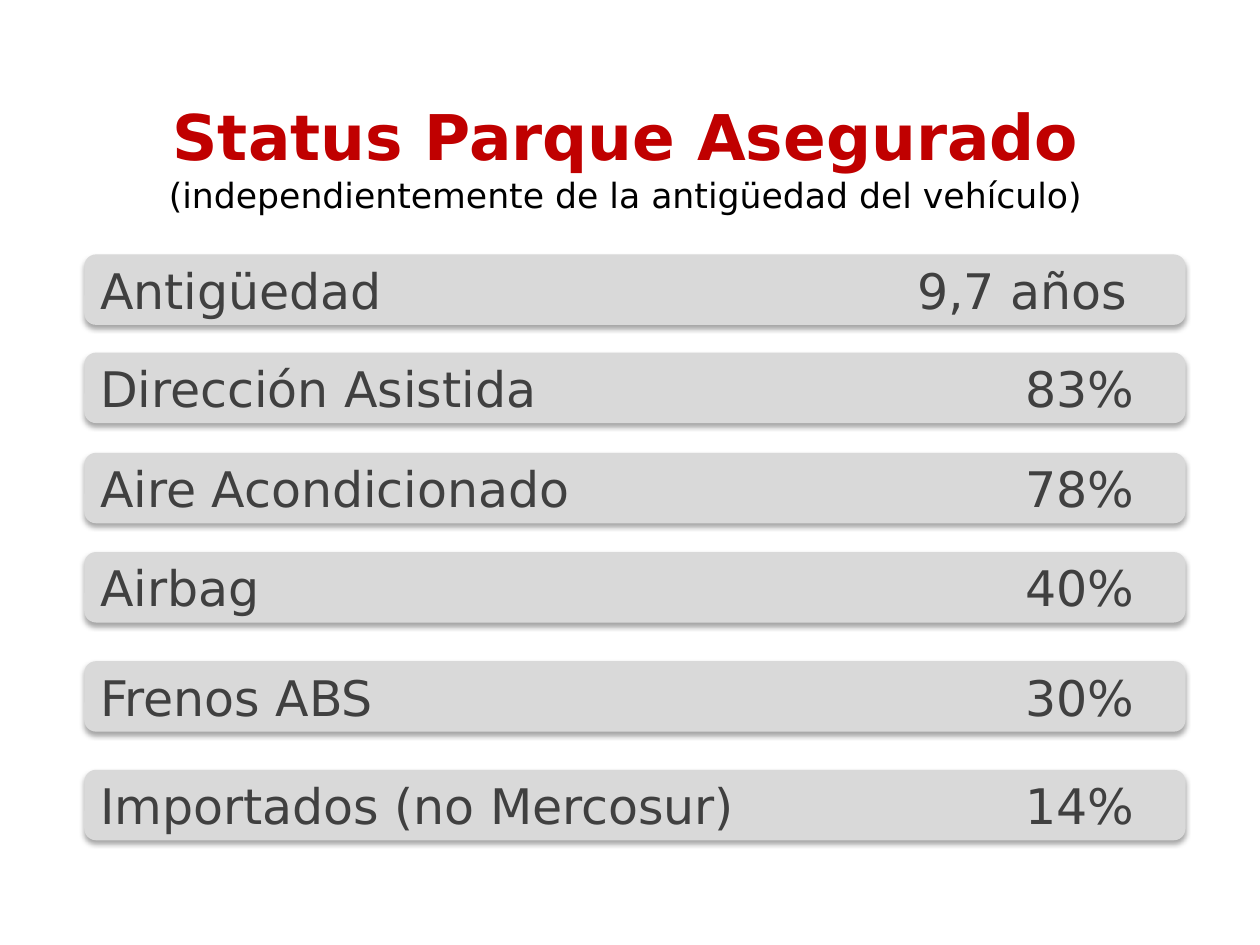
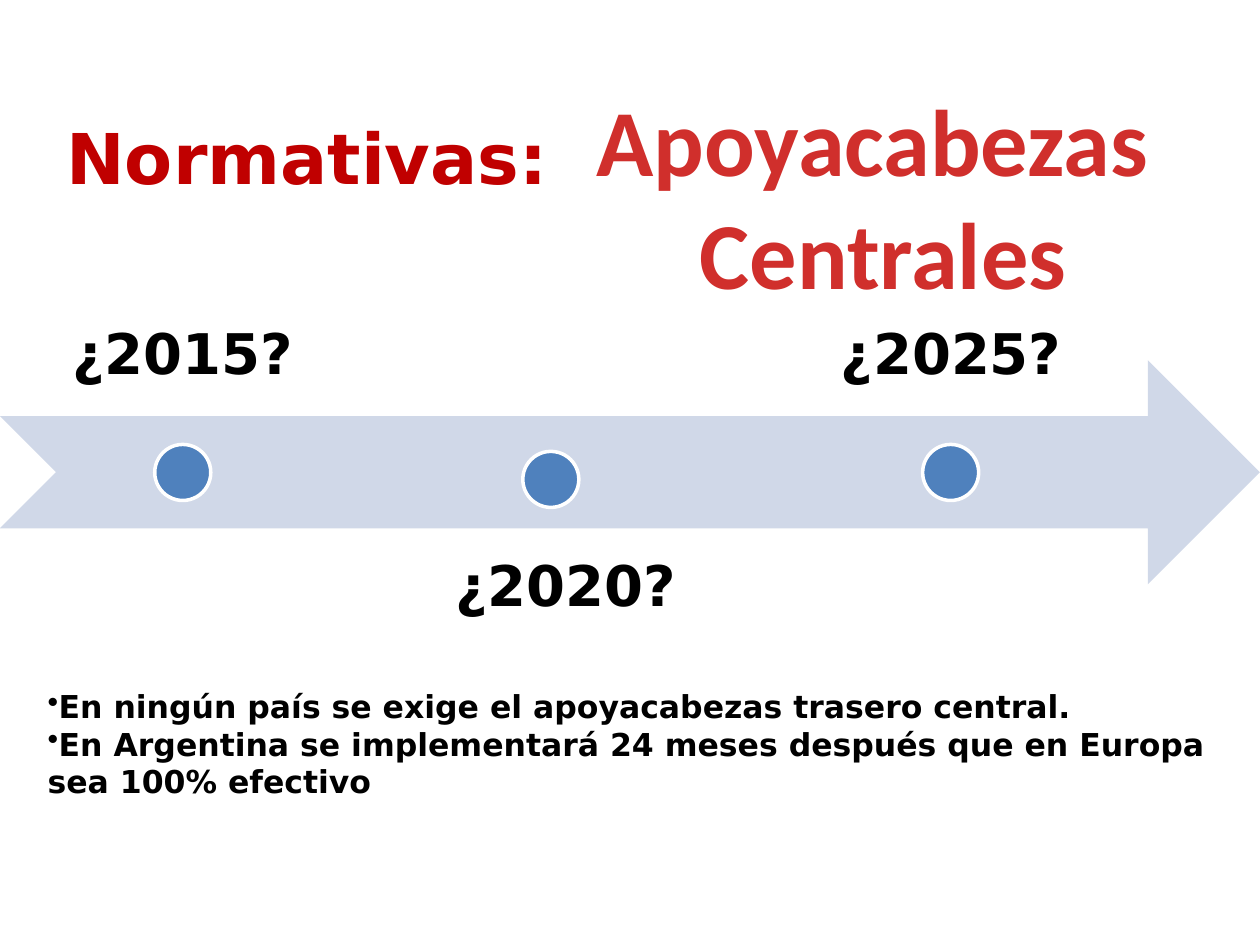
import pptx
import pptx.util
import pptx.dml.color
import pptx.enum.shapes
import pptx.enum.text
import pptx.oxml
import pptx.oxml.ns

Cm = pptx.util.Cm
Pt = pptx.util.Pt
SHAPE = pptx.enum.shapes.MSO_SHAPE
ALIGN = pptx.enum.text.PP_ALIGN
ANCHOR = pptx.enum.text.MSO_ANCHOR

COLORS = {
    "title": "C00000",
    "topic": "D02F2C",
    "text": "000000",
    "bar": "D9D9D9",
    "bar_text": "404040",
    "arrow": "D0D8E8",
    "dot": "4F81BD",
    "dot_line": "FFFFFF",
}
FONT = "DejaVu Sans"
FORMATS = {
    "title": {"size": Pt(36), "name": FONT, "bold": True},
    "heading": {"size": Pt(40), "name": FONT, "bold": True},
    "subtitle": {"size": Pt(19.8), "name": FONT, "bold": False},
    "row": {"size": Pt(28), "name": FONT, "bold": False},
    "year": {"size": Pt(32), "name": FONT, "bold": True},
    "note": {"size": Pt(18), "name": FONT, "bold": True},
    "topic": {"size": Pt(54), "name": "Calibri", "bold": True},
}
ROWS = [
    (5.13, "Antigüedad", "9,7 años", 20.7),
    (7.11, "Dirección Asistida", "83%", 20.85),
    (9.13, "Aire Acondicionado", "78%", 20.85),
    (11.13, "Airbag", "40%", 20.85),
    (13.33, "Frenos ABS", "30%", 20.85),
    (15.52, "Importados (no Mercosur)", "14%", 20.85),
]
MILESTONES = [
    ("¿2015?", 0, 3.89, ANCHOR.BOTTOM, 3.12, 8.96),
    ("¿2020?", 7.72, 10.64, ANCHOR.TOP, 10.54, 9.1),
    ("¿2025?", 15.49, 3.89, ANCHOR.BOTTOM, 18.6, 8.96),
]
NOTES = [
    "En ningún país se exige el apoyacabezas trasero central.",
    "En Argentina se implementará 24 meses después que en Europa sea 100% efectivo",
]


def rgb(color):
    return pptx.dml.color.RGBColor.from_string(COLORS[color])


def add_xml(parent, xml):
    parent.append(pptx.oxml.parse_xml(
        xml.replace(" ", f" {pptx.oxml.ns.nsdecls('a')} ", 1)))


def add_run(p, text, style, color):
    r = p.add_run()
    r.text = text
    for name, value in FORMATS[style].items():
        setattr(r.font, name, value)
    r.font.color.rgb = rgb(color)


def add_text(s, box, anchor=ANCHOR.TOP, wrap=True, inset=None):
    tf = s.shapes.add_textbox(*map(Cm, box)).text_frame
    tf.word_wrap = wrap
    tf.vertical_anchor = anchor
    if inset is not None:
        for side in ("left", "top", "right", "bottom"):
            setattr(tf, f"margin_{side}", Cm(inset))
    return tf


def add_title(s, width, text, style, align):
    p = add_text(s, (1.09, 2.34, width, 1.63), ANCHOR.MIDDLE).paragraphs[0]
    p.alignment = align
    add_run(p, text, style, "title")
    return p


def add_shape(s, kind, box, fill, line=None):
    sp = s.shapes.add_shape(kind, *map(Cm, box))
    sp.shadow.inherit = False
    sp.fill.solid()
    sp.fill.fore_color.rgb = rgb(fill)
    if line:
        sp.line.color.rgb = rgb(line)
        sp.line.width = Pt(2)
    else:
        sp.line.fill.background()
    return sp


def add_row(s, top, label, value, tab):
    sp = add_shape(s, SHAPE.ROUNDED_RECTANGLE, (1.7, top, 22.2, 1.42), "bar")
    add_xml(sp.element.spPr.find(pptx.oxml.ns.qn("a:effectLst")),
            f'<a:outerShdw blurRad="{Pt(3.1)}" dist="{Pt(1.8)}" dir="5400000" rotWithShape="0">'
            '<a:srgbClr val="000000"><a:alpha val="35000"/></a:srgbClr></a:outerShdw>')
    tf = sp.text_frame
    tf.vertical_anchor = ANCHOR.MIDDLE
    p = tf.paragraphs[0]
    p.alignment = ALIGN.LEFT
    add_xml(p._p.get_or_add_pPr(),
            f'<a:tabLst ><a:tab pos="{Cm(tab)}" algn="r"/></a:tabLst>')
    add_run(p, f"{label}\t{value}", "row", "bar_text")


def add_milestone(s, year, left, top, anchor, dot_left, dot_top):
    p = add_text(s, (left, top, 7.37, 4.52), anchor, inset=0.63).paragraphs[0]
    p.alignment = ALIGN.CENTER
    p.line_spacing = 0.9
    add_run(p, year, "year", "text")
    add_shape(s, SHAPE.OVAL, (dot_left, dot_top, 1.13, 1.13), "dot", "dot_line")


def add_paragraphs(tf, lines, style, color, align=ALIGN.LEFT, bullet=None):
    for i, line in enumerate(lines):
        p = tf.add_paragraph() if i else tf.paragraphs[0]
        p.alignment = align
        if bullet:
            add_xml(p._p.get_or_add_pPr(), f'<a:buChar char="{bullet}"/>')
        add_run(p, line, style, color)


def build_status(s):
    p = add_title(s, 23.04, "Status Parque Asegurado", "title", ALIGN.CENTER)
    p.add_line_break()
    add_run(p, "(independientemente de la antigüedad del vehículo)", "subtitle", "text")
    for row in ROWS:
        add_row(s, *row)


def build_rules(s):
    add_shape(s, SHAPE.NOTCHED_RIGHT_ARROW, (0, 7.26, 25.4, 4.52), "arrow")
    for milestone in MILESTONES:
        add_milestone(s, *milestone)
    add_paragraphs(add_text(s, (0.71, 13.72, 24, 2.57)),
                   NOTES, "note", "text", bullet="•")
    add_paragraphs(add_text(s, (11.71, 1.52, 12.19, 4.88), wrap=False),
                   ["Apoyacabezas ", "Centrales"], "topic", "topic", ALIGN.CENTER)
    add_title(s, 10.39, "Normativas:", "heading", ALIGN.LEFT)


def main():
    prs = pptx.Presentation()
    prs.slide_width, prs.slide_height = Cm(25.4), Cm(19.05)
    for build in (build_status, build_rules):
        build(prs.slides.add_slide(prs.slide_layouts[6]))
    prs.save("out.pptx")


if __name__ == "__main__":
    main()
